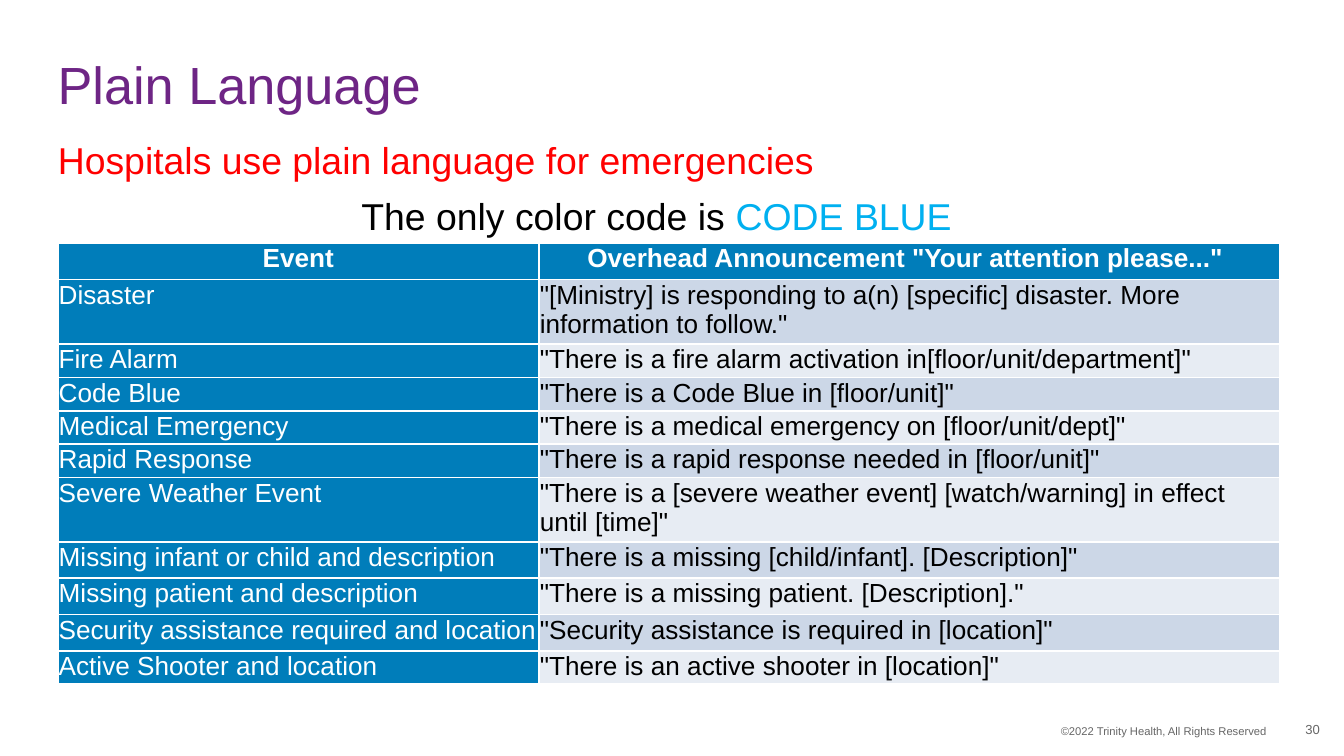
from dataclasses import dataclass
from typing import NamedTuple

from pptx import Presentation
from pptx import util as u
from pptx.dml.color import RGBColor
from pptx.enum import text


@dataclass(frozen=True)
class Theme:
    font: str = "Arial"
    title: str = "6E2585"
    alert: str = "FF0000"
    code_blue: str = "00B0F0"
    ink: str = "000000"
    white: str = "FFFFFF"
    muted: str = "666666"
    header: str = "007DBA"
    bands: tuple = ("CCD7E7", "E7ECF3")
    title_size: float = 28
    lead_size: float = 20
    table_size: float = 14
    copyright_size: float = 6
    number_size: float = 7


class Run(NamedTuple):
    text: str
    color: str


class Para(NamedTuple):
    runs: list[Run]
    size: float
    align: text.PP_ALIGN = text.PP_ALIGN.LEFT
    after: float = 0
    spacing: float = 1.0


class Box(NamedTuple):
    at: tuple[float, float, float, float]
    insets: tuple[float, float, float, float]
    paras: list[Para]
    anchor: text.MSO_ANCHOR = text.MSO_ANCHOR.TOP


class Event(NamedTuple):
    name: str
    announcement: str
    height: float


T = Theme()
LEFT, CENTER, RIGHT = text.PP_ALIGN.LEFT, text.PP_ALIGN.CENTER, text.PP_ALIGN.RIGHT
MIDDLE = text.MSO_ANCHOR.MIDDLE

BOXES = [
    Box((0.43, 0.92, 9.01, 4.11), (0, 0.1, 0.1, 0.05), [
        Para([Run("Hospitals use plain language for emergencies", T.alert)],
             T.lead_size, after=6),
        Para([Run("The only color code is ", T.ink), Run("CODE BLUE", T.code_blue)],
             T.lead_size, CENTER, after=6),
    ]),
    Box((0.43, 0.38, 9, 0.55), (0, 0, 0, 0),
        [Para([Run("Plain Language", T.title)], T.title_size, spacing=0.9)], MIDDLE),
    Box((5.33, 5.34, 4.19, 0.2), (0.1, 0.05, 0.1, 0.05),
        [Para([Run("©2022 Trinity Health, All Rights Reserved", T.muted)],
              T.copyright_size, RIGHT)]),
    Box((9.38, 5.28, 0.44, 0.3), (0.1, 0.05, 0, 0.05),
        [Para([Run("30", T.muted)], T.number_size, RIGHT)], MIDDLE),
]

HEADER = Event("Event", 'Overhead Announcement "Your attention please..." ', 0.27)
EVENTS = [
    Event("Disaster", '"[Ministry] is responding to a(n) [specific] disaster. '
          'More information to follow."', 0.43),
    Event("Fire Alarm",
          '"There is a fire alarm activation in[floor/unit/department]"', 0.25),
    Event("Code Blue", '"There is a Code Blue in [floor/unit]"', 0.24),
    Event("Medical Emergency",
          '"There is a medical emergency on [floor/unit/dept]"', 0.24),
    Event("Rapid Response", '"There is a rapid response needed in [floor/unit]"', 0.24),
    Event("Severe Weather Event", '"There is a [severe weather event] '
          '[watch/warning] in effect until [time]"', 0.43),
    Event("Missing infant or child and description",
          '"There is a missing [child/infant]. [Description]"', 0.27),
    Event("Missing patient and description",
          '"There is a missing patient. [Description]."', 0.27),
    Event("Security assistance required and location",
          '"Security assistance is required in [location]"', 0.27),
    Event("Active Shooter and location",
          '"There is an active shooter in [location]"', 0.24),
]
COLUMNS = (3.58, 5.51)
CELL_INSET = 0.5 / 72  # half a point


def set_insets(target, insets: tuple[float, float, float, float]) -> None:
    """Set the margins of a text frame or a table cell."""
    sides = ("margin_left", "margin_top", "margin_right", "margin_bottom")
    for side, inset in zip(sides, insets):
        setattr(target, side, u.Inches(inset))


def write_para(p, para: Para, bold: bool = False) -> None:
    p.alignment = para.align
    p.space_after = u.Pt(para.after)
    p.line_spacing = para.spacing
    p.font.name, p.font.size, p.font.bold = T.font, u.Pt(para.size), bold
    for run in para.runs:
        r = p.add_run()
        r.text = run.text
        r.font.color.rgb = RGBColor.from_string(run.color)


def add_box(slide, box: Box) -> None:
    tf = slide.shapes.add_textbox(*map(u.Inches, box.at)).text_frame
    tf.word_wrap = True
    tf.vertical_anchor = box.anchor
    set_insets(tf, box.insets)
    for i, para in enumerate(box.paras):
        write_para(tf.add_paragraph() if i else tf.paragraphs[0], para)


def fill_cell(cell, words: str, color: str, fill: str, is_header: bool) -> None:
    set_insets(cell, (CELL_INSET,) * 4)
    cell.fill.solid()
    cell.fill.fore_color.rgb = RGBColor.from_string(fill)
    write_para(cell.text_frame.paragraphs[0],
               Para([Run(words, color)], T.table_size, CENTER if is_header else LEFT),
               bold=is_header)


def add_events(slide, rows: list[Event]) -> None:
    """Add the table; its default style supplies the white borders."""
    height = sum(row.height for row in rows)
    table = slide.shapes.add_table(
        len(rows), len(COLUMNS), u.Inches(0.43), u.Inches(1.81),
        u.Inches(sum(COLUMNS)), u.Inches(height)).table
    for column, width in zip(table.columns, COLUMNS):
        column.width = u.Inches(width)
    for i, row in enumerate(rows):
        table.rows[i].height = u.Inches(row.height)
        is_header = i == 0
        fill_cell(table.cell(i, 0), row.name, T.white, T.header, is_header)
        color, fill = (T.white, T.header) if is_header else (T.ink, T.bands[(i - 1) % 2])
        fill_cell(table.cell(i, 1), row.announcement, color, fill, is_header)


def main() -> None:
    # Widescreen page, 16 to 9
    prs = Presentation()
    prs.slide_width = u.Inches(10)
    prs.slide_height = u.Inches(10 * 9 / 16)
    slide = prs.slides.add_slide(prs.slide_layouts[6])

    # Title, lead lines and footer
    for box in BOXES:
        add_box(slide, box)

    # Announcement table
    add_events(slide, [HEADER, *EVENTS])

    prs.save("out.pptx")


if __name__ == "__main__":
    main()
